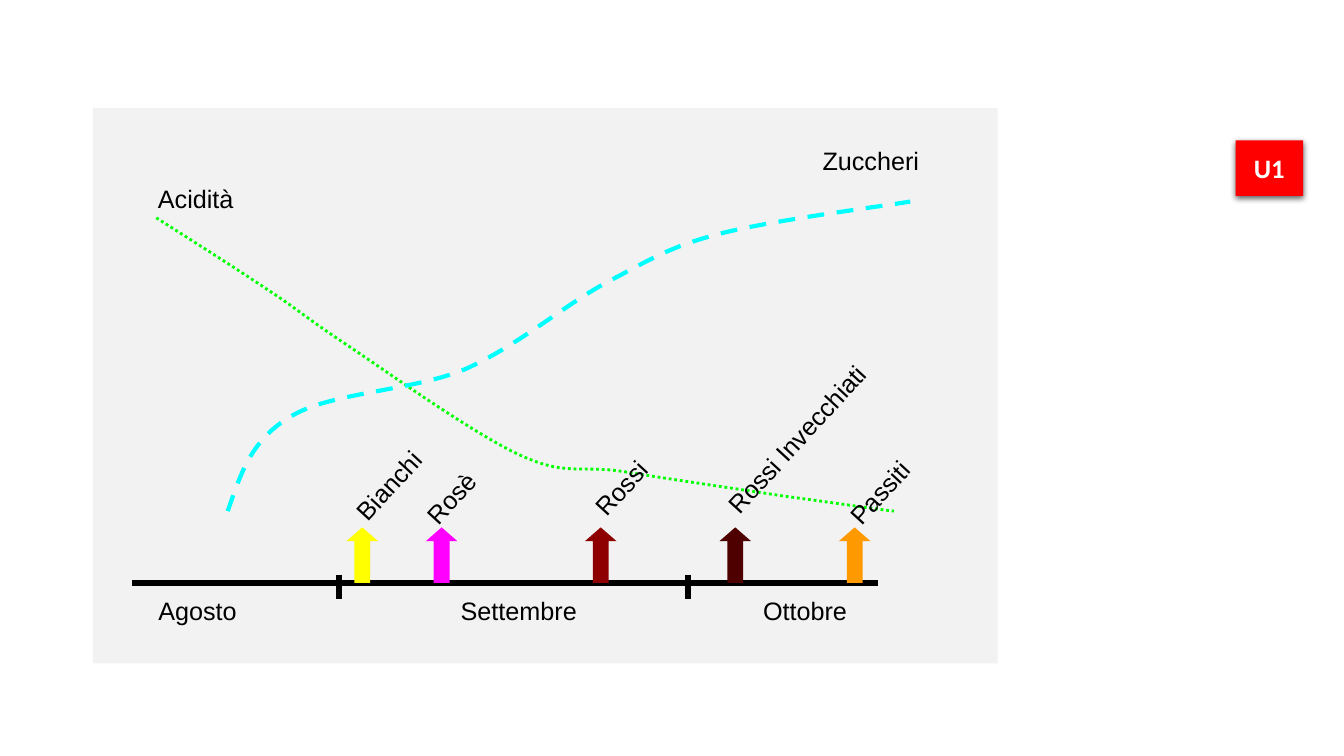
from lxml.etree import SubElement
from pptx import Presentation
from pptx.dml.color import RGBColor
from pptx.enum.dml import MSO_LINE
from pptx.enum.shapes import MSO_CONNECTOR, MSO_SHAPE
from pptx.enum.text import MSO_ANCHOR, MSO_AUTO_SIZE, PP_ALIGN
from pptx.oxml.ns import qn
from pptx.util import Cm, Pt

COLORS = {
    "panel": "F2F2F2", "ink": "000000", "badge": "FF0000", "white": "FFFFFF",
    "acidity": "00FF00", "sugar": "00FFFF", "bianchi": "FFFF00",
    "rose": "FF00FF", "rossi": "8E0000", "aged": "4E0000", "passiti": "FF9900",
}
AXIS_Y = 14.69
ARROW_W, ARROW_H = 0.8, 1.4
LABEL_H = 1.02

WINES = [
    ("Bianchi", "bianchi", 8.73, (8.48, 11.68, 2.69), False),
    ("Rosè", "rose", 10.73, (10.34, 11.96, 2.18), False),
    ("Rossi", "rossi", 14.74, (14.58, 11.74, 2.21), False),
    ("Rossi Invecchiati", "aged", 18.13, (17.4, 10.46, 5.51), True),
    ("Passiti", "passiti", 21.14, (20.47, 10.74, 5.51), True),
]
ACIDITY = [
    (3.94, 5.49), (4.93, 6.12), (5.94, 6.76), (6.73, 7.29),
    (7.54, 7.82), (7.67, 7.98), (8.74, 8.69),
    (9.8, 9.4), (11.96, 10.95), (13.13, 11.48),
    (14.3, 12.01), (14.63, 11.71), (15.75, 11.89),
    (16.84, 12.07), (18.59, 12.32), (19.74, 12.5),
    (20.88, 12.65), (22.07, 12.83), (22.53, 12.88),
]
SUGAR = [
    (5.74, 12.88), (6.05, 11.99), (6.32, 11.07), (7.34, 10.49),
    (8.33, 9.88), (10.39, 9.86), (11.73, 9.3),
    (13.06, 8.71), (14.27, 7.65), (15.34, 7.09),
    (16.41, 6.53), (16.87, 6.22), (18.14, 5.89),
    (19.41, 5.56), (22.15, 5.21), (22.94, 5.08),
]


def color(name):
    return RGBColor.from_string(COLORS[name])


class Canvas:
    font = "Arial"
    size = 18

    def __init__(self, slide):
        self.shapes = slide.shapes

    def shape(self, kind, x, y, w, h, fill):
        sp = self.shapes.add_shape(kind, Cm(x), Cm(y), Cm(w), Cm(h))
        sp.shadow.inherit = False
        sp.fill.solid()
        sp.fill.fore_color.rgb = color(fill)
        sp.line.fill.background()
        return sp

    def line(self, x1, y1, x2, y2):
        cn = self.shapes.add_connector(
            MSO_CONNECTOR.STRAIGHT, Cm(x1), Cm(y1), Cm(x2), Cm(y2))
        cn.line.color.rgb = color("ink")
        cn.line.width = Pt(4)
        SubElement(cn._element.spPr, qn("a:effectLst"))

    def arrow(self, x, fill):
        sp = self.shape(MSO_SHAPE.UP_ARROW, x, AXIS_Y - ARROW_H, ARROW_W, ARROW_H, fill)
        sp.adjustments[0] = 0.5
        sp.adjustments[1] = 0.437

    def curve(self, controls, stroke, width, dash):
        points = [(Cm(x), Cm(y)) for x, y in controls]
        fb = self.shapes.build_freeform(*points[0])
        fb.add_line_segments(points[1:], close=False)
        sp = fb.convert_to_shape()
        outline = next(sp._element.iter(qn("a:path")))
        segments = outline.findall(qn("a:lnTo"))
        for i in range(0, len(segments), 3):
            bezier = SubElement(outline, qn("a:cubicBezTo"))
            for segment in segments[i:i + 3]:
                bezier.append(segment[0])
                outline.remove(segment)
        sp.shadow.inherit = False
        sp.fill.background()
        sp.line.color.rgb = color(stroke)
        sp.line.width = Pt(width)
        sp.line.dash_style = dash

    def text(self, text, x, y, w, rotation=0, wrap=False, tabs=()):
        tb = self.shapes.add_textbox(Cm(x), Cm(y), Cm(w), Cm(LABEL_H))
        tb.rotation = rotation
        tf = tb.text_frame
        tf.word_wrap = wrap
        tf.auto_size = MSO_AUTO_SIZE.SHAPE_TO_FIT_TEXT
        tf.text = text
        p = tf.paragraphs[0]
        if tabs:
            tab_list = SubElement(p._p.get_or_add_pPr(), qn("a:tabLst"))
            for pos in tabs:
                SubElement(tab_list, qn("a:tab"), pos=str(Cm(pos)), algn="l")
        self.style(p, self.font, self.size, "ink")

    def style(self, p, font, size, ink, bold=False):
        for r in p.runs:
            r.font.name = font
            r.font.size = Pt(size)
            r.font.bold = bold
            r.font.color.rgb = color(ink)

    def badge(self, text, x, y, w, h):
        sp = self.shape(MSO_SHAPE.RECTANGLE, x, y, w, h, "badge")
        effects = sp._element.spPr.find(qn("a:effectLst"))
        shadow = SubElement(effects, qn("a:outerShdw"), blurRad=str(Pt(4.5)),
                            dist=str(Pt(1.5)), dir="5400000", rotWithShape="0")
        shade = SubElement(shadow, qn("a:srgbClr"), val=COLORS["ink"])
        SubElement(shade, qn("a:alpha"), val="63000")
        tf = sp.text_frame
        tf.text = text
        tf.vertical_anchor = MSO_ANCHOR.MIDDLE
        p = tf.paragraphs[0]
        p.alignment = PP_ALIGN.CENTER
        self.style(p, "Calibri", 19, "white", bold=True)


def main():
    prs = Presentation()
    prs.slide_width, prs.slide_height = Cm(33.87), Cm(19.05)
    s = Canvas(prs.slides.add_slide(prs.slide_layouts[6]))

    s.shape(MSO_SHAPE.RECTANGLE, 2.34, 2.72, 22.8, 14, "panel")
    s.line(3.33, AXIS_Y, 22.13, AXIS_Y)
    s.text("Agosto\tSettembre\tOttobre", 3.74, 14.88, 17.86, tabs=(7.62, 15.24))
    for x in (8.54, 17.34):
        s.line(x, 14.48, x, 15.09)
    for _, fill, x, _, _ in WINES:
        s.arrow(x, fill)
    s.curve(ACIDITY, "acidity", 2, MSO_LINE.ROUND_DOT)
    s.curve(SUGAR, "sugar", 3, MSO_LINE.DASH)
    for name, _, _, place, wrap in WINES:
        s.text(name, *place, rotation=312.6, wrap=wrap)
    s.text("Zuccheri", 20.48, 3.53, 2.95)
    s.text("Acidità", 3.73, 4.5, 2.41)
    s.badge("U1", 31.14, 3.54, 1.7, 1.4)

    prs.save("out.pptx")


if __name__ == "__main__":
    main()
